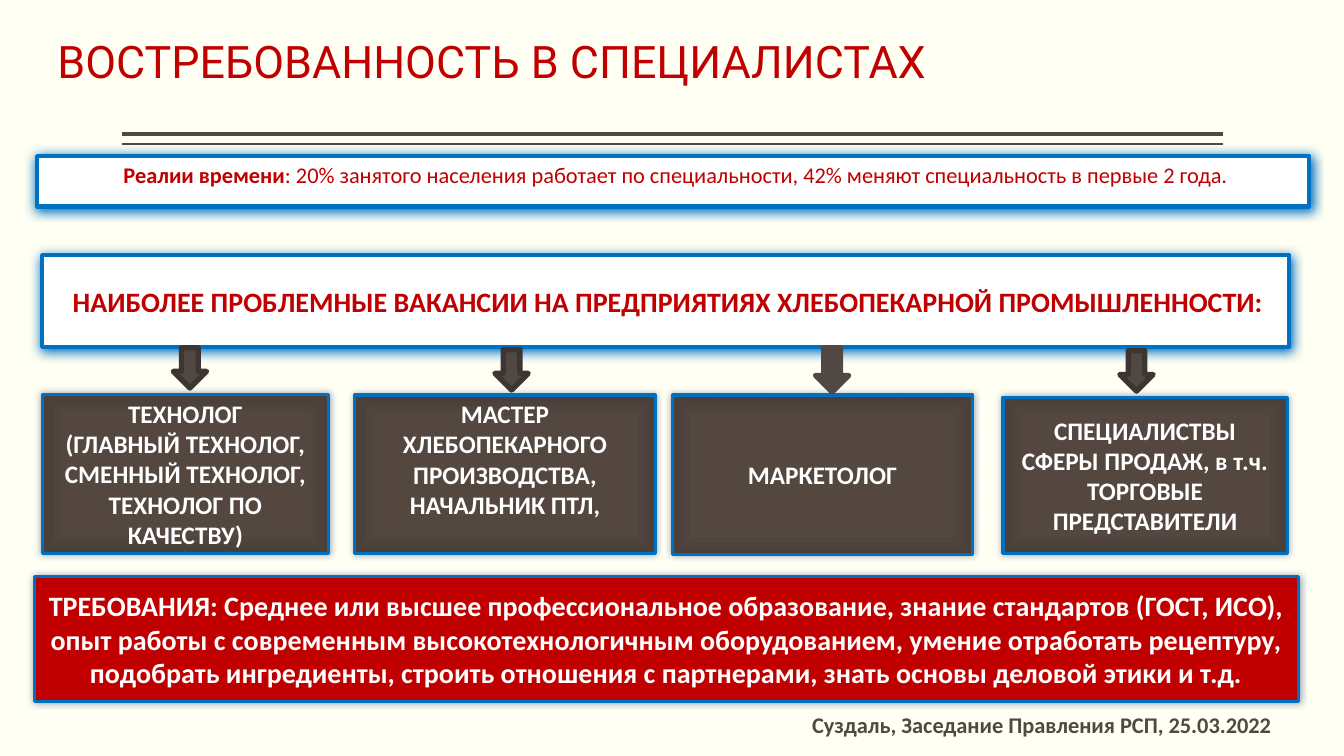
from dataclasses import dataclass

import lxml.etree
import pptx
import pptx.dml.color
import pptx.enum.shapes
import pptx.enum.text
import pptx.oxml
import pptx.oxml.ns
import pptx.util

Pt = pptx.util.Pt
RGBColor = pptx.dml.color.RGBColor
Align = pptx.enum.text.PP_ALIGN
Anchor = pptx.enum.text.MSO_ANCHOR
Preset = pptx.enum.shapes.MSO_SHAPE

IVORY = RGBColor(0xFF, 0xFF, 0xF3)
WHITE = RGBColor(0xFF, 0xFF, 0xFF)
RED = RGBColor(0xC0, 0x00, 0x00)
BLUE = RGBColor(0x00, 0x70, 0xC0)
NAVY = RGBColor(0x00, 0x20, 0x60)
BROWN = RGBColor(0x51, 0x48, 0x43)
DARK_BROWN = RGBColor(0x3C, 0x35, 0x32)
CARD_STOPS = (
    (0, RGBColor(0x54, 0x47, 0x40)),
    (71, RGBColor(0x53, 0x47, 0x40)),
    (100, RGBColor(0x4A, 0x3F, 0x39)),
)


@dataclass(frozen=True)
class Box:
    left: float
    top: float
    width: float
    height: float

    def lengths(self) -> list[pptx.util.Length]:
        return [Pt(n) for n in (self.left, self.top, self.width, self.height)]


@dataclass(frozen=True)
class Glow:
    color: RGBColor
    opacity: int
    blur: float
    distance: float


@dataclass(frozen=True)
class Insets:
    left: float = 7.2
    right: float = 7.2
    bottom: float = 3.6


@dataclass(frozen=True)
class Panel:
    box: Box
    paragraphs: tuple[str, ...]
    size: float
    fill: RGBColor | None  # None gives the brown gradient
    ink: RGBColor
    border: float
    glow: Glow
    insets: Insets = Insets()
    anchor: Anchor = Anchor.MIDDLE
    bold: bool = True


@dataclass(frozen=True)
class Vacancy:
    box: Box
    paragraphs: tuple[str, ...]
    arrow: Box
    arrow_line: RGBColor = DARK_BROWN
    bottom_inset: float = 3.6


BLUE_GLOW = Glow(BLUE, 100, 8.5, 1)
NAVY_GLOW = Glow(NAVY, 40, 5, 0)
HEADING_INSETS = Insets(left=3.6, right=0)

REALITIES = Panel(Box(26.6, 111.6, 908.6, 36), (), 16, WHITE, RED, 3,
                  BLUE_GLOW, HEADING_INSETS, Anchor.TOP, False)
REALITIES_LEAD = "Реалии времени"
REALITIES_REST = (": 20% занятого населения работает по специальности, "
                  "42% меняют специальность в первые 2 года.")
HEADING = Panel(
    Box(30.2, 182.2, 890.6, 65.5),
    ("НАИБОЛЕЕ ПРОБЛЕМНЫЕ ВАКАНСИИ НА ПРЕДПРИЯТИЯХ ХЛЕБОПЕКАРНОЙ ПРОМЫШЛЕННОСТИ:",),
    20, WHITE, RED, 3, BLUE_GLOW, HEADING_INSETS)
REQUIREMENTS = Panel(
    Box(24.5, 411.8, 902.9, 89.3),
    ("ТРЕБОВАНИЯ: Среднее или высшее профессиональное образование, знание "
     "стандартов (ГОСТ, ИСО), опыт работы с современным высокотехнологичным "
     "оборудованием, умение отработать рецептуру, подобрать ингредиенты, строить "
     "отношения с партнерами, знать основы деловой этики и т.д.",),
    20, RED, WHITE, 2.25, NAVY_GLOW)
VACANCIES = (
    Vacancy(Box(30.2, 281.5, 204.5, 113.8),
            ("ТЕХНОЛОГ", "(ГЛАВНЫЙ ТЕХНОЛОГ, СМЕННЫЙ ТЕХНОЛОГ, ТЕХНОЛОГ ПО КАЧЕСТВУ)"),
            Box(123.8, 248.4, 23.8, 28.8)),
    Vacancy(Box(253.4, 282.2, 214.6, 113),
            ("МАСТЕР ХЛЕБОПЕКАРНОГО ПРОИЗВОДСТВА, НАЧАЛЬНИК ПТЛ,",),
            Box(353.5, 249.8, 23.8, 28.8), bottom_inset=25.2),
    Vacancy(Box(480.2, 282.2, 214.6, 113.8), ("МАРКЕТОЛОГ",),
            Box(582.5, 248.4, 23.8, 31.7), BROWN),
    Vacancy(Box(716.4, 283.7, 203, 111.6),
            ("СПЕЦИАЛИСТВЫ СФЕРЫ ПРОДАЖ, в т.ч. ТОРГОВЫЕ ПРЕДСТАВИТЕЛИ",),
            Box(799.9, 250.6, 23.8, 28.8)),
)


def format_paragraph(paragraph, size: float, color: RGBColor, bold: bool,
                     align: Align = Align.CENTER, face: str = "Calibri") -> None:
    paragraph.alignment = align
    paragraph.font.size = Pt(size)
    paragraph.font.name = face
    paragraph.font.bold = bold
    paragraph.font.color.rgb = color


def fill_with_gradient(shape) -> None:
    """Replace the shape's solid fill with a rectangular gradient from its centre."""
    shape.fill.solid()
    stops = "".join(f'<a:gs pos="{pos * 1000}"><a:srgbClr val="{color}"/></a:gs>'
                    for pos, color in CARD_STOPS)
    gradient = pptx.oxml.parse_xml(
        f'<a:gradFill {pptx.oxml.ns.nsdecls("a")} rotWithShape="1"><a:gsLst>{stops}</a:gsLst>'
        '<a:path path="rect"><a:fillToRect l="50000" t="50000" r="50000" b="50000"/>'
        '</a:path></a:gradFill>')
    properties = shape.element.spPr
    properties.replace(properties.find(pptx.oxml.ns.qn("a:solidFill")), gradient)


def add_glow(shape, glow: Glow) -> None:
    effects = shape.element.spPr.find(pptx.oxml.ns.qn("a:effectLst"))
    effects.append(pptx.oxml.parse_xml(
        f'<a:outerShdw {pptx.oxml.ns.nsdecls("a")} blurRad="{Pt(glow.blur)}" '
        f'dist="{Pt(glow.distance)}" dir="5400000" algn="ctr" rotWithShape="0">'
        f'<a:srgbClr val="{glow.color}"><a:alpha val="{glow.opacity * 1000}"/></a:srgbClr>'
        '</a:outerShdw>'))


def add_preset(slide, preset: Preset, box: Box, fill: RGBColor | None,
               line: RGBColor, line_width: float):
    shape = slide.shapes.add_shape(preset, *box.lengths())
    shape.shadow.inherit = False
    if fill is None:
        fill_with_gradient(shape)
    else:
        shape.fill.solid()
        shape.fill.fore_color.rgb = fill
    shape.line.color.rgb = line
    shape.line.width = Pt(line_width)
    return shape


def add_panel(slide, panel: Panel):
    shape = add_preset(slide, Preset.RECTANGLE, panel.box, panel.fill, BLUE, panel.border)
    add_glow(shape, panel.glow)
    frame = shape.text_frame
    frame.word_wrap = True
    frame.vertical_anchor = panel.anchor
    frame.margin_left = Pt(panel.insets.left)
    frame.margin_right = Pt(panel.insets.right)
    frame.margin_bottom = Pt(panel.insets.bottom)
    frame.text = "\n".join(panel.paragraphs)
    for paragraph in frame.paragraphs:
        format_paragraph(paragraph, panel.size, panel.ink, panel.bold)
    return shape


def add_rule(slide, top: float, width: float) -> None:
    rule = slide.shapes.add_connector(pptx.enum.shapes.MSO_CONNECTOR.STRAIGHT,
                                      Pt(87.1), Pt(top), Pt(873.4), Pt(top))
    rule.line.color.rgb = BROWN
    rule.line.width = Pt(width)
    lxml.etree.SubElement(rule.element.spPr, pptx.oxml.ns.qn("a:effectLst"))


def set_title(slide) -> None:
    title = slide.shapes.title
    title.left, title.top, title.width, title.height = Box(41, 23.8, 879.8, 42.5).lengths()
    frame = title.text_frame
    frame.text = "ВОСТРЕБОВАННОСТЬ В СПЕЦИАЛИСТАХ"
    frame.auto_size = pptx.enum.text.MSO_AUTO_SIZE.NONE
    frame.vertical_anchor = Anchor.BOTTOM
    frame.margin_left = frame.margin_right = 0
    frame.paragraphs[0].line_spacing = 0.9
    format_paragraph(frame.paragraphs[0], 32, RED, False, Align.LEFT, "Roboto")


def add_venue(slide) -> None:
    venue = slide.shapes.add_textbox(*Box(528.5, 504.7, 431.3, 26.6).lengths())
    venue.text_frame.word_wrap = True
    venue.text_frame.text = "Суздаль, Заседание Правления РСП, 25.03.2022"
    format_paragraph(venue.text_frame.paragraphs[0], 16, BROWN, True)


def main() -> None:
    deck = pptx.Presentation()
    deck.slide_width, deck.slide_height = Pt(960), Pt(540)
    slide = deck.slides.add_slide(deck.slide_layouts[5])
    slide.background.fill.solid()
    slide.background.fill.fore_color.rgb = IVORY

    add_rule(slide, 95.8, 3)
    add_rule(slide, 103, 1)
    set_title(slide)
    realities = add_panel(slide, REALITIES).text_frame.paragraphs[0]
    lead = realities.add_run()
    lead.text = REALITIES_LEAD
    lead.font.bold = True
    realities.add_run().text = REALITIES_REST
    add_panel(slide, HEADING)
    for vacancy in VACANCIES:
        add_panel(slide, Panel(vacancy.box, vacancy.paragraphs, 18, None, WHITE, 2.25,
                               NAVY_GLOW, Insets(bottom=vacancy.bottom_inset)))
        add_preset(slide, Preset.DOWN_ARROW, vacancy.arrow, BROWN, vacancy.arrow_line, 3.78)
    add_panel(slide, REQUIREMENTS)
    add_venue(slide)
    deck.save("out.pptx")


if __name__ == "__main__":
    main()
